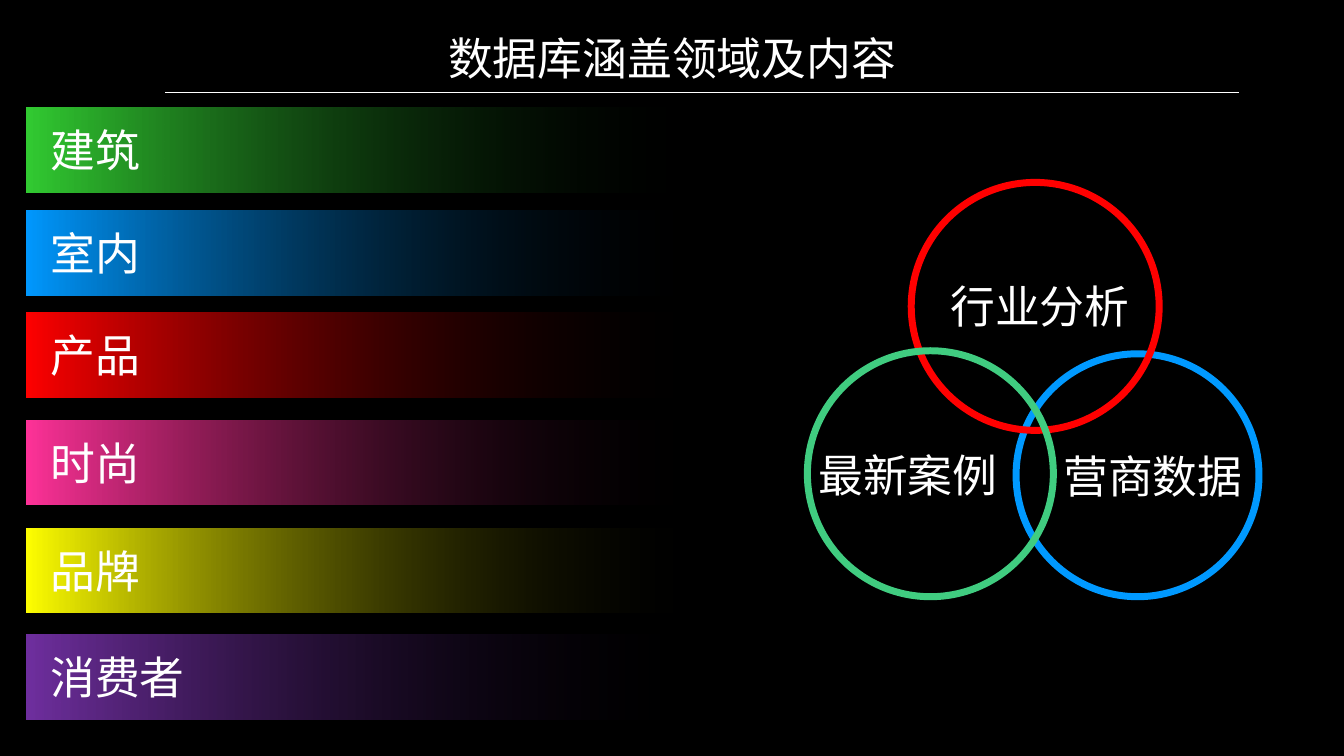
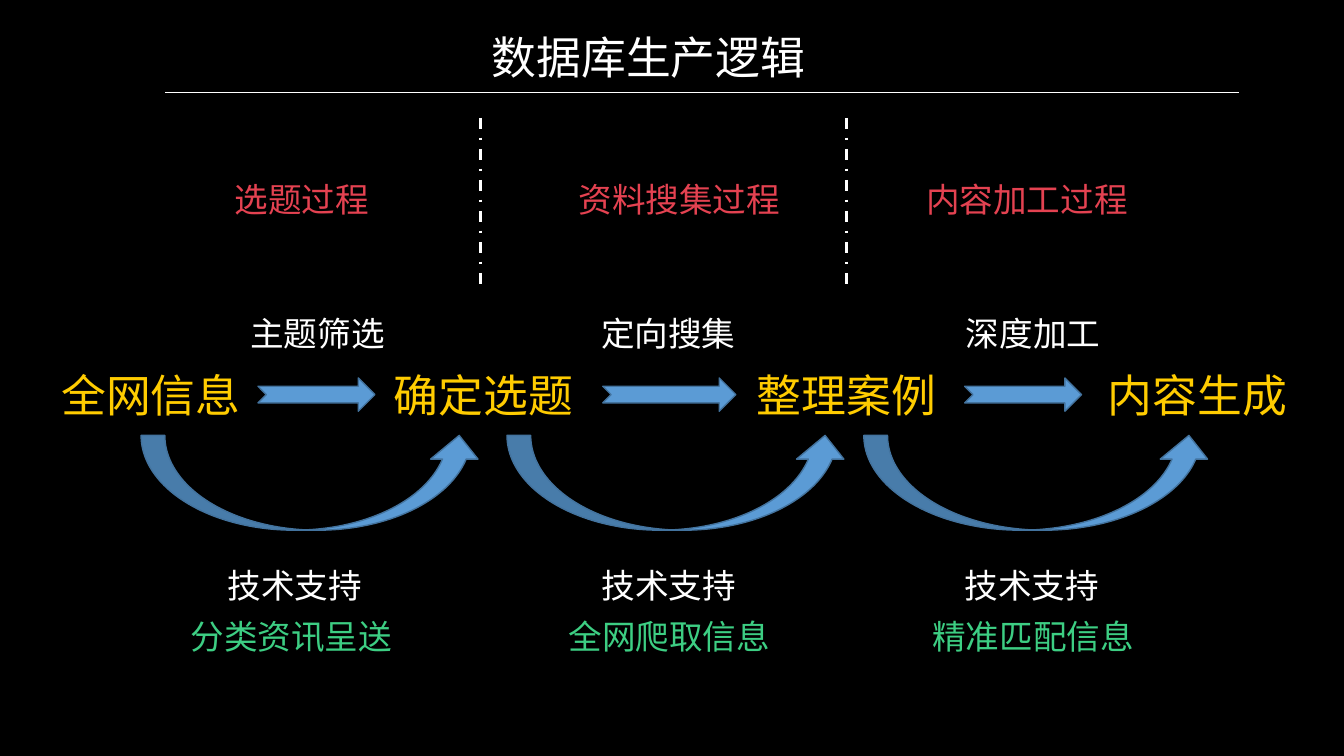
from lxml import etree
from pptx import Presentation, util as u
from pptx.dml.color import RGBColor
from pptx.enum import dml, shapes, text
from pptx.oxml import ns

# Grid: square cells of a tenth of an inch
CELL = u.Inches(0.1)
COLUMNS, ROWS = 133.33, 75
FONT = "Noto Sans CJK SC"
LARGE, MEDIUM = 32, 24

BLACK = RGBColor(0x00, 0x00, 0x00)
WHITE = RGBColor(0xFF, 0xFF, 0xFF)
GREEN = RGBColor(0x33, 0xCC, 0x33)
BLUE = RGBColor(0x00, 0x99, 0xFF)
RED = RGBColor(0xFF, 0x00, 0x00)
PINK = RGBColor(0xFF, 0x33, 0x99)
YELLOW = RGBColor(0xFF, 0xFF, 0x00)
PURPLE = RGBColor(0x70, 0x30, 0xA0)
MINT = RGBColor(0x40, 0xCC, 0x80)
GOLD = RGBColor(0xFF, 0xCC, 0x00)
CORAL = RGBColor(0xE4, 0x42, 0x51)
JADE = RGBColor(0x3D, 0xCE, 0x83)
ARROW_FILL = RGBColor(0x5B, 0x9B, 0xD5)
ARROW_EDGE = RGBColor(0x43, 0x73, 0x9E)


def cells(*counts):
    return [u.Emu(round(count * CELL)) for count in counts]


class Board:
    """Holds the deck style and the slide being drawn."""

    def __init__(self):
        self.deck = Presentation()
        self.deck.slide_width, self.deck.slide_height = cells(COLUMNS, ROWS)
        fill = self.deck.slide_master.background.fill
        fill.solid()
        fill.fore_color.rgb = BLACK
        self.slide = None

    def new_slide(self, title, left, top, width):
        self.slide = self.deck.slides.add_slide(self.deck.slide_layouts[5])
        box = self.slide.shapes.title
        box.left, box.top, box.width, box.height = cells(left, top, width, 9.3)
        box.text_frame.text = title
        box.text_frame.vertical_anchor = text.MSO_ANCHOR.MIDDLE
        para = box.text_frame.paragraphs[0]
        para.line_spacing = 0.9
        self.style(para, LARGE, WHITE, centred=True)
        self.line(16.4, 9.2, 122.9, 9.2, 0.5)

    def style(self, para, size, colour, centred=False):
        align = text.PP_ALIGN
        para.alignment = align.CENTER if centred else align.LEFT
        for span in para.runs:
            span.font.size = u.Pt(size)
            span.font.name = FONT
            span.font.color.rgb = colour
            east_asian = etree.SubElement(span.font._element, ns.qn("a:ea"))
            east_asian.set("typeface", FONT)

    def label(self, words, left, top, width, size=LARGE, colour=WHITE, centred=False):
        height = 6.7 if size == LARGE else 5.3
        box = self.slide.shapes.add_textbox(*cells(left, top, width, height))
        box.text_frame.word_wrap = True
        box.text_frame.text = words
        self.style(box.text_frame.paragraphs[0], size, colour, centred)

    def shape(self, kind, left, top, width, height):
        shape = self.slide.shapes.add_shape(kind, *cells(left, top, width, height))
        shape.shadow.inherit = False
        return shape

    def fading_bar(self, left, top, width, height, colour):
        bar = self.shape(shapes.MSO_SHAPE.RECTANGLE, left, top, width, height)
        bar.line.fill.background()
        bar.fill.gradient()
        bar.fill.gradient_angle = 0
        start, end = bar.fill.gradient_stops
        start.color.rgb, end.color.rgb = colour, BLACK
        # The far end is fully transparent
        last = bar._element.spPr.findall(".//" + ns.qn("a:srgbClr"))[-1]
        etree.SubElement(last, ns.qn("a:alpha")).set("val", "0")

    def ring(self, left, top, size, colour):
        ring = self.shape(shapes.MSO_SHAPE.OVAL, left, top, size, size)
        ring.fill.background()
        ring.line.color.rgb = colour
        ring.line.width = u.Pt(5)

    def arrow(self, kind, left, top, width, height):
        arrow = self.shape(kind, left, top, width, height)
        arrow.fill.solid()
        arrow.fill.fore_color.rgb = ARROW_FILL
        arrow.line.color.rgb = ARROW_EDGE
        arrow.line.width = u.Pt(1)

    def line(self, x1, y1, x2, y2, width, dash=None):
        line = self.slide.shapes.add_connector(
            shapes.MSO_CONNECTOR.STRAIGHT, *cells(x1, y1, x2, y2))
        line.line.color.rgb = WHITE
        line.line.width = u.Pt(width)
        if dash:
            line.line.dash_style = dash
        etree.SubElement(line._element.spPr, ns.qn("a:effectLst"))


def draw_fields(board):
    board.new_slide("数据库涵盖领域及内容", 30.4, 1.4, 72.6)

    # Fields as fading bars
    fields = [("建筑", 10.7, GREEN), ("室内", 20.9, BLUE), ("产品", 31, RED),
              ("时尚", 41.7, PINK), ("品牌", 52.4, YELLOW), ("消费者", 63, PURPLE)]
    for name, top, colour in fields:
        board.fading_bar(2.6, top, 68.8, 8.4, colour)
        board.label(name, 4, top + 1, 66)

    # Contents as three linked rings
    for left, top, size, colour in [(100.8, 35.1, 24.1, BLUE),
                                    (90.4, 18.1, 24.6, RED),
                                    (80.1, 34.8, 24.4, MINT)]:
        board.ring(left, top, size, colour)
    for name, left, top in [("行业分析", 93.3, 27.2), ("最新案例", 80.2, 43.9),
                            ("营商数据", 104.5, 44)]:
        board.label(name, left, top, 21.7)


def draw_process(board):
    board.new_slide("数据库生产逻辑", 41.5, 1.3, 45.7)

    # Arrows between the stages
    kinds = shapes.MSO_SHAPE
    for left, width in [(14, 33.9), (50.3, 33.9), (85.7, 34.6)]:
        board.arrow(kinds.CURVED_UP_ARROW, left, 43.2, width, 9.4)
    for left, width in [(25.6, 11.6), (59.8, 13.2), (95.7, 11.6)]:
        board.arrow(kinds.NOTCHED_RIGHT_ARROW, left, 37.5, width, 3.3)

    # Rows of labels: top, width, size, colour, centred, (words, left)
    rows = [
        (17.3, 25.6, MEDIUM, CORAL, False,
         [("选题过程", 22.3), ("资料搜集过程", 56.4), ("内容加工过程", 90.9)]),
        (30.6, 23.4, MEDIUM, WHITE, True,
         [("主题筛选", 19.8), ("定向搜集", 54.6), ("深度加工", 90.8)]),
        (36, 21.9, LARGE, GOLD, False,
         [("全网信息", 5.1), ("确定选题", 38.1), ("整理案例", 74.1), ("内容生成", 108.9)]),
        (55.6, 18.3, MEDIUM, WHITE, False,
         [("技术支持", left) for left in (21.6, 58.7, 94.7)]),
        (60.6, 23.4, MEDIUM, JADE, True,
         [("分类资讯呈送", 17.2), ("全网爬取信息", 54.7), ("精准匹配信息", 90.8)]),
    ]
    for top, width, size, colour, centred, labels in rows:
        for words, left in labels:
            board.label(words, left, top, width, size, colour, centred)

    # Dividers between the phases
    for column in (47.7, 84):
        board.line(column, 11.7, column, 28.2, 2, dml.MSO_LINE.DASH_DOT)


def main():
    board = Board()
    draw_fields(board)
    draw_process(board)
    board.deck.save("out.pptx")


if __name__ == "__main__":
    main()
